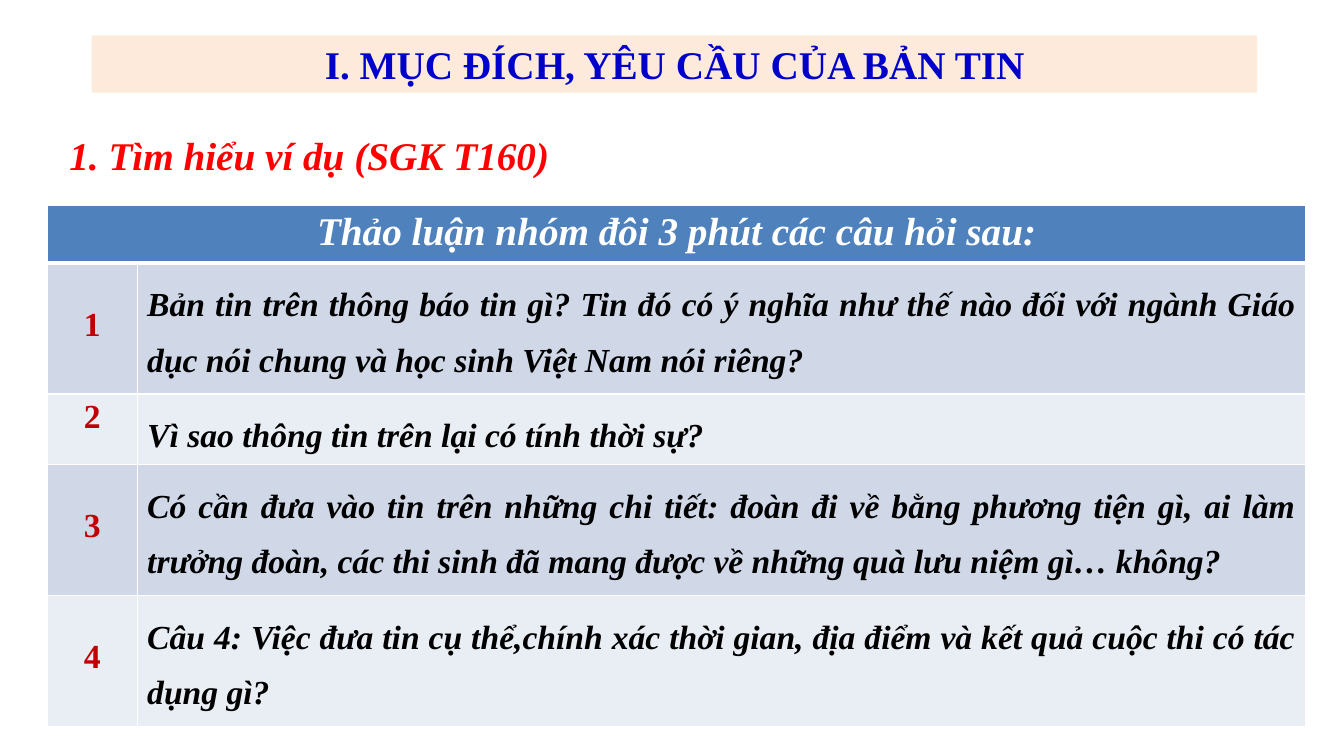
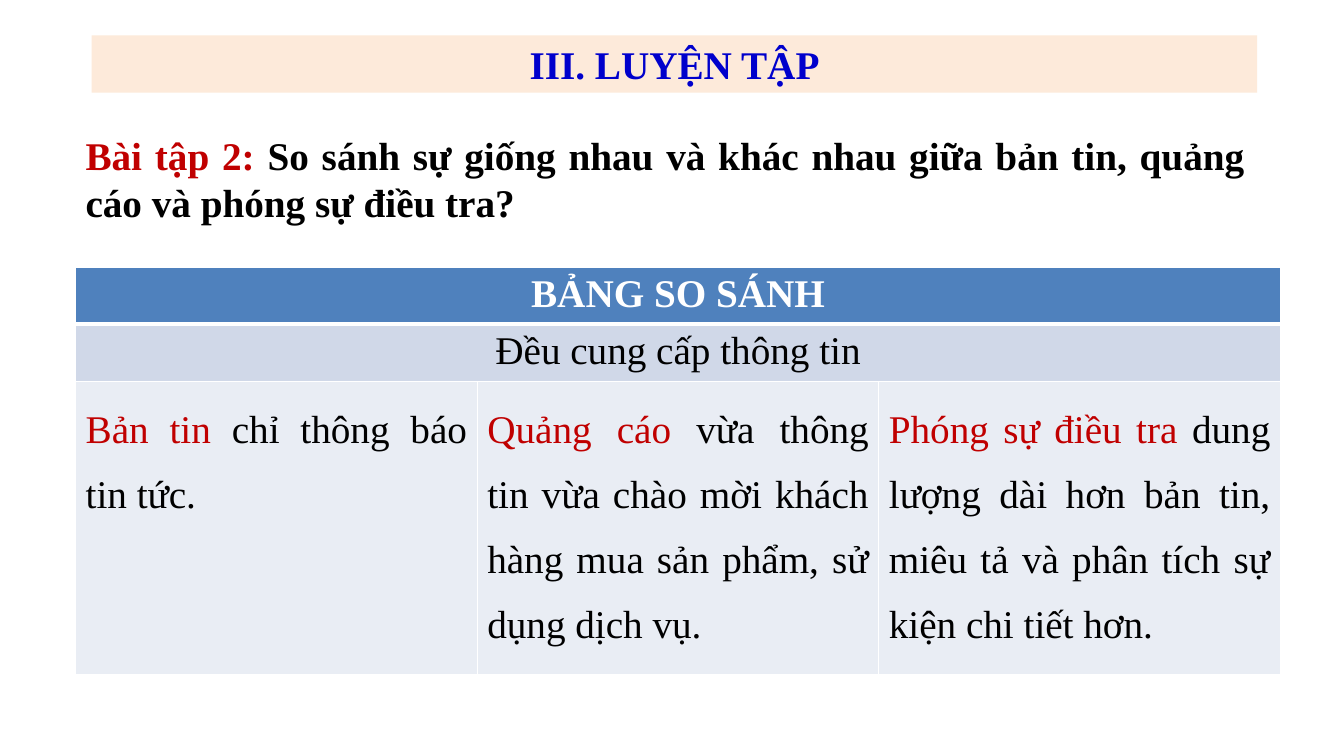
from dataclasses import dataclass

import pptx
import pptx.dml.color
import pptx.enum.text
import pptx.oxml
import pptx.oxml.ns
import pptx.util
from pptx.util import Inches

ALIGN = pptx.enum.text.PP_ALIGN
ANCHOR = pptx.enum.text.MSO_ANCHOR


@dataclass(frozen=True)
class Theme:
    font: str = "Times New Roman"
    band: str = "FDEADA"
    title: str = "0000CC"
    red: str = "FF0000"
    accent: str = "C00000"
    text: str = "000000"
    white: str = "FFFFFF"
    header: str = "4F81BD"
    stripes: tuple = ("D0D8E8", "E9EDF4")
    large: int = 28
    medium: int = 24
    thin: int = 1
    thick: int = 3
    cell_margin: float = 0.05


THEME = Theme()
TITLE_BOX = (0.91, 0.35, 11.56, 0.57)

DISCUSSION = {
    "title": "I. MỤC ĐÍCH, YÊU CẦU CỦA BẢN TIN",
    "heading": "1. Tìm hiểu ví dụ (SGK T160)",
    "table_header": "Thảo luận nhóm đôi 3 phút các câu hỏi sau:",
    "questions": [
        "Bản tin trên thông báo tin gì? Tin đó có ý nghĩa như thế nào đối với ngành Giáo dục nói chung và học sinh Việt Nam nói riêng?",
        "Vì sao thông tin trên lại có tính thời sự?",
        "Có cần đưa vào tin trên những chi tiết: đoàn đi về bằng phương tiện gì, ai làm trưởng đoàn, các thi sinh đã mang được về những quà lưu niệm gì… không?",
        "Câu 4: Việc đưa tin cụ thể,chính xác thời gian, địa điểm và kết quả cuộc thi có tác dụng gì?",
    ],
    "row_heights": [0.56, 1.3, 0.7, 1.3, 1.3],
}

COMPARISON = {
    "title": "III. LUYỆN TẬP",
    "exercise": ("Bài tập 2: ", "So sánh sự giống nhau và khác nhau giữa bản tin, quảng cáo và phóng sự điều tra?"),
    "table_header": "BẢNG SO SÁNH",
    "shared": "Đều cung cấp thông tin",
    "differences": [
        ("Bản tin ", "chỉ thông báo tin tức."),
        ("Quảng cáo ", "vừa thông tin vừa chào mời khách hàng mua sản phẩm, sử dụng dịch vụ."),
        ("Phóng sự điều tra ", "dung lượng dài hơn bản tin, miêu tả và phân tích sự kiện chi tiết hơn."),
    ],
    "row_heights": [0.56, 0.56, 2.91],
}


def rgb(color):
    """Return the colour object for a hexadecimal string."""
    return pptx.dml.color.RGBColor.from_string(color)


def write(frame, runs, size=THEME.large, align=ALIGN.LEFT, bold=False, italic=False, spacing=None):
    """Fill the first paragraph with (text, colour) runs in one font."""
    paragraph = frame.paragraphs[0]
    paragraph.alignment = align
    if spacing:
        paragraph.line_spacing = spacing
    font = paragraph.font
    font.name = THEME.font
    font.size = pptx.util.Pt(size)
    font.bold = bold
    font.italic = italic
    for text, color in runs:
        run = paragraph.add_run()
        run.text = text
        run.font.color.rgb = rgb(color)


def lead_runs(parts):
    """Colour a lead phrase and the text that follows it."""
    return list(zip(parts, (THEME.accent, THEME.text)))


def add_titled_slide(presentation, text):
    """Add a title-only slide whose title is a coloured band."""
    slide = presentation.slides.add_slide(presentation.slide_layouts[5])
    title = slide.shapes.title
    title.left, title.top, title.width, title.height = map(Inches, TITLE_BOX)
    title.fill.solid()
    title.fill.fore_color.rgb = rgb(THEME.band)
    frame = title.text_frame
    frame.auto_size = pptx.enum.text.MSO_AUTO_SIZE.NONE
    frame.vertical_anchor = ANCHOR.TOP
    write(frame, [(text, THEME.title)], align=ALIGN.CENTER, bold=True)
    return slide


def add_text(slide, box, runs, **style):
    """Add a wrapping text box."""
    frame = slide.shapes.add_textbox(*map(Inches, box)).text_frame
    frame.word_wrap = True
    write(frame, runs, bold=True, **style)


def set_borders(cell, top, bottom):
    """Draw white borders round a cell, with widths in points."""
    properties = cell._tc.get_or_add_tcPr()
    widths = {"lnL": THEME.thin, "lnR": THEME.thin, "lnT": top, "lnB": bottom}
    for tag, width in widths.items():
        properties.append(pptx.oxml.parse_xml(
            f'<a:{tag} {pptx.oxml.ns.nsdecls("a")} w="{pptx.util.Pt(width)}">'
            f'<a:solidFill><a:srgbClr val="{THEME.white}"/></a:solidFill></a:{tag}>'
        ))


def add_striped_table(slide, left, top, column_widths, row_heights, header, italic=False):
    """Add a striped table with a merged header row."""
    shape = slide.shapes.add_table(
        len(row_heights), len(column_widths), Inches(left), Inches(top),
        Inches(sum(column_widths)), Inches(sum(row_heights)),
    )
    table = shape.table
    table.horz_banding = False
    for column, width in zip(table.columns, column_widths):
        column.width = Inches(width)
    for index, (row, height) in enumerate(zip(table.rows, row_heights)):
        row.height = Inches(height)
        for cell in row.cells:
            set_borders(
                cell,
                THEME.thick if index == 1 else THEME.thin,
                THEME.thick if index == 0 else THEME.thin,
            )
            cell.fill.solid()
            color = THEME.stripes[(index - 1) % 2] if index else THEME.header
            cell.fill.fore_color.rgb = rgb(color)
    merge_row(table, 0)
    write(table.cell(0, 0).text_frame, [(header, THEME.white)],
          align=ALIGN.CENTER, bold=True, italic=italic)
    return table


def merge_row(table, row):
    """Merge all cells of one row."""
    table.cell(row, 0).merge(table.cell(row, len(table.columns) - 1))


def build_discussion(presentation, content):
    """Build the slide with the numbered questions."""
    slide = add_titled_slide(presentation, content["title"])
    add_text(slide, (0.59, 1.25, 6.78, 0.57), [(content["heading"], THEME.red)], italic=True)
    heights = content["row_heights"]
    table = add_striped_table(slide, 0.47, 2.04, (0.89, 11.59), heights,
                              content["table_header"], italic=True)
    for number, question in enumerate(content["questions"], 1):
        number_cell = table.cell(number, 0)
        tall = heights[number] > 1
        number_cell.margin_top = Inches(THEME.cell_margin + (0.38 if tall else 0))
        write(number_cell.text_frame, [(str(number), THEME.accent)],
              size=THEME.medium, align=ALIGN.CENTER, bold=True)
        write(table.cell(number, 1).text_frame, [(question, THEME.text)],
              size=THEME.medium, align=ALIGN.JUSTIFY, bold=True, italic=True, spacing=1.5)


def build_comparison(presentation, content):
    """Build the slide with the comparison table."""
    slide = add_titled_slide(presentation, content["title"])
    add_text(slide, (0.75, 1.25, 11.69, 1.04), lead_runs(content["exercise"]), align=ALIGN.JUSTIFY)
    differences = content["differences"]
    widths = [11.95 / len(differences)] * len(differences)
    table = add_striped_table(slide, 0.75, 2.65, widths, content["row_heights"],
                              content["table_header"])
    merge_row(table, 1)
    write(table.cell(1, 0).text_frame, [(content["shared"], THEME.text)], align=ALIGN.CENTER)
    for column, parts in enumerate(differences):
        write(table.cell(2, column).text_frame, lead_runs(parts),
              align=ALIGN.JUSTIFY, spacing=1.5)


def main():
    """Build and save the presentation."""
    presentation = pptx.Presentation()
    presentation.slide_width = Inches(13.33)
    presentation.slide_height = Inches(7.5)
    build_discussion(presentation, DISCUSSION)
    build_comparison(presentation, COMPARISON)
    presentation.save("out.pptx")


if __name__ == "__main__":
    main()
